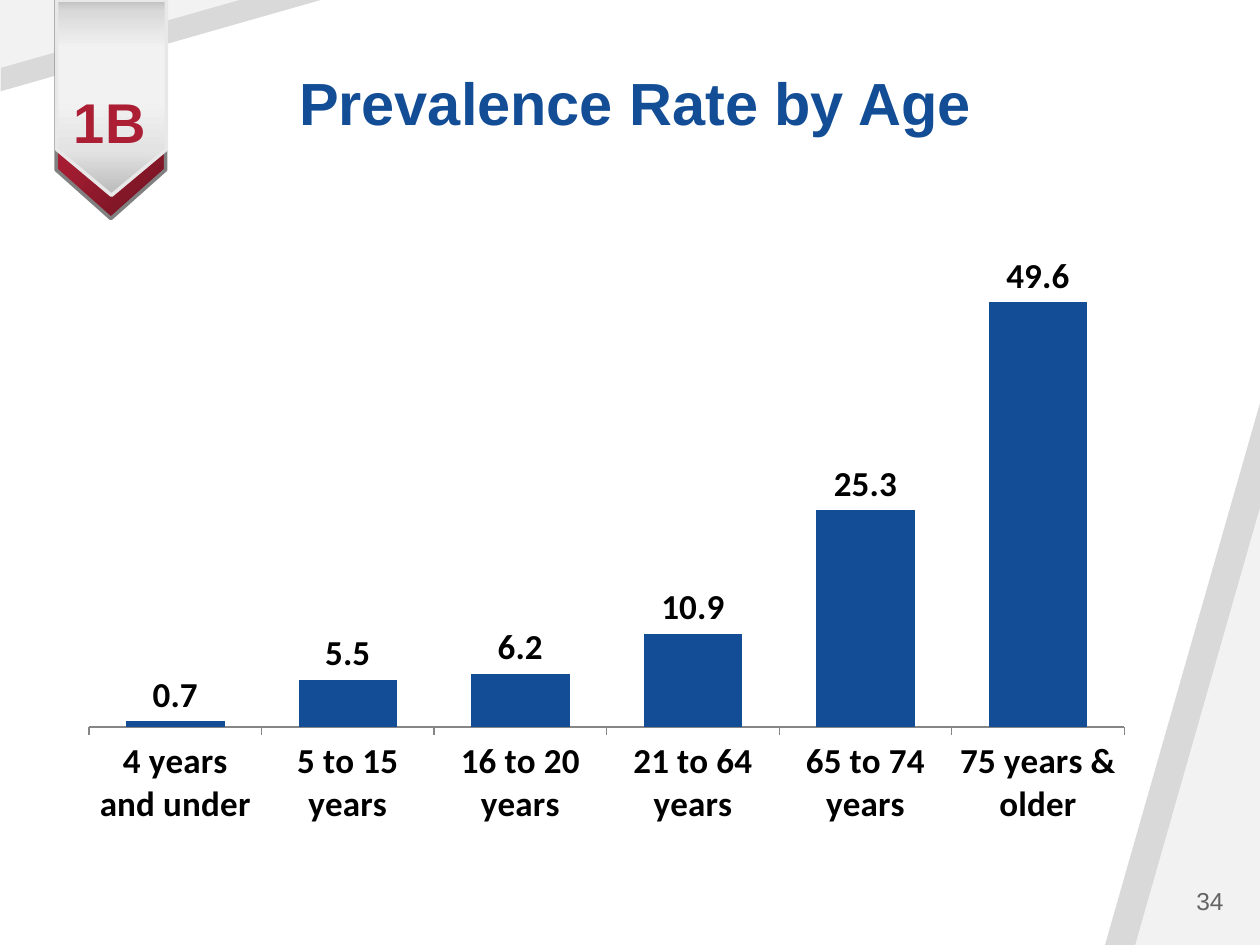
from lxml import etree
from pptx import Presentation
from pptx import util as u
from pptx.chart.data import CategoryChartData
from pptx.dml.color import RGBColor
from pptx.enum import chart as c, shapes, text
from pptx.oxml import parse_xml
from pptx.oxml.ns import nsdecls, qn

BLUE, RED, BLACK = "124D95", "AC1E34", "000000"
PALE, GREY = "F2F2F2", "D9D9D9"
AGE_RATES = {
    "4 years and under": 0.7, "5 to 15 years": 5.5, "16 to 20 years": 6.2,
    "21 to 64 years": 10.9, "65 to 74 years": 25.3, "75 years & older": 49.6,
}


def rgb(value):
    return RGBColor.from_string(value)


def box(left, top, width, height):
    return [u.Inches(v) for v in (left, top, width, height)]


def style_font(font, size, color, name="Arial", bold=False):
    font.size, font.name, font.bold = u.Pt(size), name, bold
    font.color.rgb = rgb(color)


def write(frame, words, size, color, bold=False, align="CENTER",
          anchor="TOP", spacing=1.0):
    """Fill a text frame with one formatted line and return its run."""
    frame.word_wrap = True
    frame.auto_size = text.MSO_AUTO_SIZE.NONE
    frame.vertical_anchor = text.MSO_ANCHOR[anchor]
    line = frame.paragraphs[0]
    line.alignment = text.PP_ALIGN[align]
    line.line_spacing = spacing
    run = line.add_run()
    run.text = words
    style_font(run.font, size, color, bold=bold)
    return run


def add_preset(slide, kind, place, adjustment, rotation=0):
    shape = slide.shapes.add_shape(kind, *box(*place))
    shape.shadow.inherit = False
    shape.adjustments[0] = adjustment
    shape.rotation = rotation
    return shape


def add_corner(slide, place, color, adjustment, rotation=0):
    corner = add_preset(slide, shapes.MSO_SHAPE.ISOSCELES_TRIANGLE, place,
                        adjustment, rotation)
    corner.fill.solid()
    corner.fill.fore_color.rgb = rgb(color)
    corner.line.fill.background()


def add_ribbon(slide, place, adjustment, stops, direction, outline):
    """Downward pentagon with a gradient of (percent, colour) stops."""
    ribbon = add_preset(slide, shapes.MSO_SHAPE.PENTAGON, place, adjustment, 90)
    ribbon.line.color.rgb = rgb(outline)
    ribbon.line.width = u.Pt(2)
    marks = "".join(
        f'<a:gs pos="{at * 1000}"><a:srgbClr val="{color}"/></a:gs>'
        for at, color in stops)
    gradient = parse_xml(
        f'<a:gradFill {nsdecls("a")} rotWithShape="1">'
        f'<a:gsLst>{marks}</a:gsLst>{direction}</a:gradFill>')
    ribbon.element.spPr.find(qn("a:prstGeom")).addnext(gradient)


def add_badge(slide):
    add_ribbon(slide, (0.01, 0.43, 1.74, 0.87), 0.445,
               [(0, "6A1320"), (48, "A61D33"), (100, "E25A6F")],
               '<a:path path="circle"><a:fillToRect l="100000" t="100000"/>'
               '</a:path>', "808080")
    add_ribbon(slide, (0.11, 0.34, 1.55, 0.87), 0.418,
               [(0, "BFBFBF"), (6, GREY), (25, PALE), (53, "F1F1F1"),
                (77, "E3E3E3"), (97, "BFBFBF")],
               '<a:lin ang="0" scaled="0"/>', "E8E8E8")
    label = slide.shapes.add_textbox(*box(0.37, 0.58, 1.01, 0.88)).text_frame
    label.margin_top = u.Inches(0.08)
    run = write(label, "1b", 40, RED, bold=True, spacing=0.9)
    properties = run.font._element
    properties.set("cap", "small")
    properties.set("spc", "40")


def set_plot_area(chart, x, y, w, h):
    """Fix the inner plot area as fractions of the chart."""
    area = chart._chartSpace.chart.plotArea
    for old in area.findall(qn("c:layout")):
        area.remove(old)
    layout = etree.Element(qn("c:layout"))
    manual = etree.SubElement(layout, qn("c:manualLayout"))
    for tag, value in (("layoutTarget", "inner"), ("xMode", "edge"),
                       ("yMode", "edge"), ("x", x), ("y", y),
                       ("w", w), ("h", h)):
        etree.SubElement(manual, qn(f"c:{tag}")).set("val", str(value))
    area.insert(0, layout)


def add_rate_chart(slide):
    data = CategoryChartData(number_format="0.0")
    data.categories = list(AGE_RATES)
    data.add_series("Series 1", list(AGE_RATES.values()))
    chart = slide.shapes.add_chart(
        c.XL_CHART_TYPE.COLUMN_CLUSTERED, *box(0.24, 1.54, 9.15, 5.31), data
    ).chart
    chart.has_legend = chart.has_title = False
    style_font(chart.font, 15, BLACK, "Calibri", True)
    set_plot_area(chart, 0.051, 0.029, 0.898, 0.768)

    # Axes
    ages, rates = chart.category_axis, chart.value_axis
    ages.major_tick_mark = c.XL_TICK_MARK.OUTSIDE
    ages.format.line.color.rgb = rgb("868686")
    style_font(ages.tick_labels.font, 20, BLACK, "Calibri", True)
    rates.minimum_scale, rates.maximum_scale = 0, 60
    rates.has_major_gridlines = rates.visible = False

    # Columns and their values
    plot = chart.plots[0]
    plot.gap_width, plot.vary_by_categories = 75, False
    columns = plot.series[0]
    columns.format.fill.solid()
    columns.format.fill.fore_color.rgb = rgb(BLUE)
    labels = columns.data_labels
    labels.show_value = True
    labels.position = c.XL_LABEL_POSITION.OUTSIDE_END
    style_font(labels.font, 20, BLACK, "Calibri", True)


def main():
    deck = Presentation()
    deck.slide_width, deck.slide_height = u.Inches(10), u.Inches(7.5)
    slide = deck.slides.add_slide(deck.slide_layouts[5])

    # Corner decoration
    add_corner(slide, (8.77, 3.2, 1.23, 4.3), GREY, 1)
    add_corner(slide, (9.01, 4.03, 0.99, 3.47), PALE, 1)
    add_corner(slide, (0.92, -0.92, 0.73, 2.56), GREY, 0, 90)
    add_corner(slide, (0.68, -0.68, 0.54, 1.9), PALE, 0, 90)

    # Title and page number
    title = slide.shapes.title
    title.left, title.top, title.width, title.height = box(0.69, 0.54, 8.7, 1.15)
    write(title.text_frame, "Prevalence Rate by Age", 34, BLUE, bold=True,
          spacing=0.9)
    page = slide.shapes.add_textbox(*box(8.41, 6.95, 1.4, 0.4))
    write(page.text_frame, "34", 14, "646464", align="RIGHT", anchor="MIDDLE")

    add_rate_chart(slide)
    add_badge(slide)
    deck.save("out.pptx")


if __name__ == "__main__":
    main()
